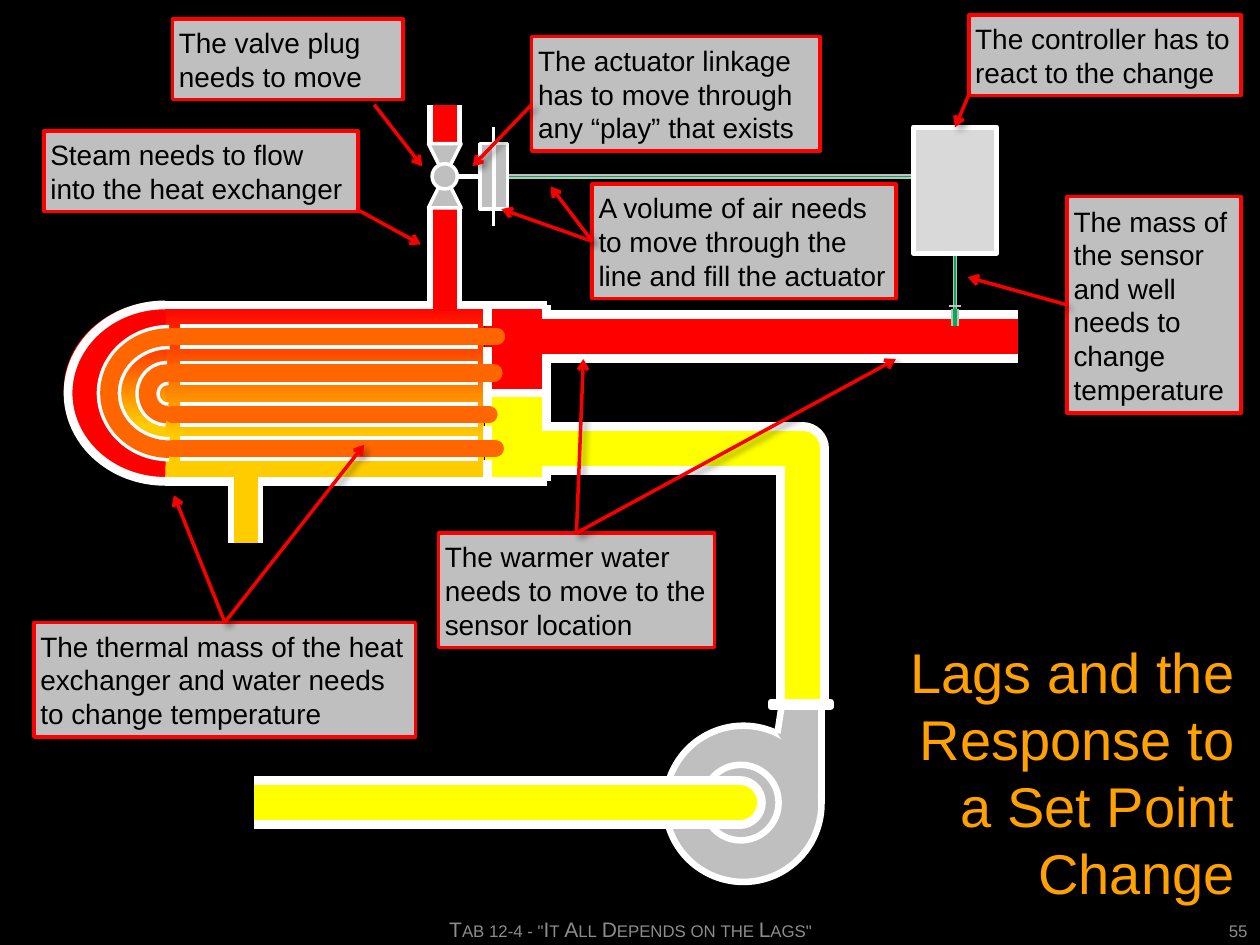
from dataclasses import dataclass

from lxml import etree
from pptx import Presentation
from pptx.dml.color import RGBColor
from pptx.enum.shapes import MSO_CONNECTOR, MSO_SHAPE
from pptx.enum.text import MSO_ANCHOR, PP_ALIGN
from pptx.oxml.ns import qn
from pptx.util import Inches, Pt

STRAIGHT = MSO_CONNECTOR.STRAIGHT
RECT, OVAL, ARC = MSO_SHAPE.RECTANGLE, MSO_SHAPE.OVAL, MSO_SHAPE.ARC
TRIANGLE = MSO_SHAPE.ISOSCELES_TRIANGLE
MIDDLE, CENTER, RIGHT, LEFT = MSO_ANCHOR.MIDDLE, PP_ALIGN.CENTER, PP_ALIGN.RIGHT, PP_ALIGN.LEFT
TOP_SIDE, LEFT_SIDE = 0, 1
HALF_UP, HALF_RIGHT = (108, 0), (162, 54.43)


@dataclass(frozen=True)
class Theme:
    """Colours, font and type sizes of the slide."""
    font: str = "Arial"
    title_size: int = 32
    note_size: int = 16
    footer_size: int = 12
    black: str = "000000"
    white: str = "FFFFFF"
    title: str = "FFA100"
    footer: str = "8C8C8C"
    metal: str = "BFBFBF"
    panel: str = "D9D9D9"
    signal: str = "00B050"
    hot: str = "FF0000"
    arrow: str = "F90000"
    tube: str = "FF6600"
    condensate: str = "FFCC00"
    cold: str = "FFFF00"


THEME = Theme()


def rgb(code):
    """Turn a hex code into a colour."""
    return RGBColor.from_string(code)


def add_shadow(effects):
    """Add a soft drop shadow to an effect list."""
    shadow = etree.SubElement(effects, qn("a:outerShdw"), blurRad=str(Pt(4)),
                              dist=str(Pt(3)), dir="2700000", algn="tl", rotWithShape="0")
    color = etree.SubElement(shadow, qn("a:srgbClr"), val=THEME.black)
    etree.SubElement(color, qn("a:alpha"), val="40000")


class Region:
    """Draws parts at offsets in inches from the corner of a region."""

    def __init__(self, page, left, top):
        self.shapes, self.left, self.top = page.shapes, left, top

    def point(self, x, y):
        """Convert an offset into a slide position."""
        return Inches(self.left + x), Inches(self.top + y)

    def line(self, start, end, color, width, cap="flat"):
        """Draw a straight line."""
        link = self.shapes.add_connector(STRAIGHT, *self.point(*start), *self.point(*end))
        link.line.color.rgb, link.line.width = rgb(color), Pt(width)
        properties = link._element.spPr
        properties.find(qn("a:ln")).set("cap", cap)
        etree.SubElement(properties, qn("a:effectLst"))
        return link

    def pipe(self, start, end, layers, cap="flat"):
        """Draw one line over another, as a wall and its content."""
        for color, width in layers:
            self.line(start, end, color, width, cap)

    def paint(self, shape, fill, line, width):
        """Set the fill and outline, either of which may be None."""
        shape.shadow.inherit = False
        if fill:
            shape.fill.solid()
            shape.fill.fore_color.rgb = rgb(fill)
        else:
            shape.fill.background()
        if line:
            shape.line.color.rgb, shape.line.width = rgb(line), Pt(width)
        else:
            shape.line.fill.background()
        return shape

    def shape(self, kind, x, y, w, h, fill=None, line=None, width=2, turn=0):
        """Draw a preset shape."""
        shape = self.shapes.add_shape(kind, *self.point(x, y), Inches(w), Inches(h))
        shape.rotation = turn
        return self.paint(shape, fill, line, width)

    def arc(self, frame, sweep, turn, color, width):
        """Draw half an ellipse as a thick line."""
        arc = self.shape(ARC, *frame, None, color, width, turn)
        arc.adjustments[0], arc.adjustments[1] = sweep
        return arc

    def outline(self, points, fill=None, line=None, width=1, close=True):
        """Draw a freeform through the points."""
        start, *rest = [self.point(*point) for point in points]
        builder = self.shapes.build_freeform(*start)
        builder.add_line_segments(rest, close=close)
        shape = self.paint(builder.convert_to_shape(), fill, line, width)
        if line:
            etree.SubElement(shape._element.spPr.find(qn("a:ln")), qn("a:round"))
        return shape


def heat_gradient(shape, angle):
    """Fade a shape from steam to condensate."""
    shape.fill.gradient()
    shape.fill.gradient_angle = angle
    first, last = shape.fill.gradient_stops
    first.color.rgb, first.position = rgb(THEME.hot), 0
    last.color.rgb, last.position = rgb(THEME.condensate), 0.75


def draw_exchanger(page, left, top):
    """Draw the shell, the water header, the tubes and the steam piping."""
    region, white, tube = Region(page, left, top), THEME.white, THEME.tube
    w, h, sheet = 3.03, 1.4, 2.56
    steam, drain = ((2.22, 0.05), (2.22, -0.76)), ((0.64, 1.34), (0.64, 1.89))
    outer_bend = ((-0.41, 0.22, 0.89, 0.96), HALF_UP, 270)
    inner_bend = ((-0.14, 0.54, 0.31, 0.33), HALF_RIGHT, 180)
    region.line(*steam, white, 20)
    region.line((0.64, 1.44), drain[1], white, 20)
    heat_gradient(region.shape(RECT, 0, 0, 2.53, h), 270)
    heat_gradient(region.arc((-0.56, 0, 1.13, 1.34), HALF_UP, 270, THEME.hot, 20), 180)
    for bend in (inner_bend, outer_bend):
        region.arc(*bend, white, 14)
    for y, color in ((0, THEME.hot), (h / 2, THEME.cold)):
        region.shape(RECT, 2.54, y, 0.49, h / 2, color)
    for y in (0, h):
        region.line((0, y), (w, y), white, 5)
    for start, end in ((0, 0.17), (0.33, 0.53), (0.59, 0.8), (0.96, 1.11), (1.23, h)):
        region.line((sheet, start), (sheet, end), white, 5)
    region.line((sheet, h / 2), (w, h / 2), white, 5)
    region.arc((-0.7, -0.07, h, 1.54), HALF_UP, 270, white, 5)
    region.line((w, 0), (w, h), white, 5)
    for y, end in ((0.25, 2.63), (0.54, 2.61), (0.87, 2.57), (1.14, 2.62)):
        region.line((2.48, y), (0.12, y), white, 14)
        region.line((end, y), (0.06, y), tube, 10, "rnd")
    for bend in (outer_bend, inner_bend):
        region.arc(*bend, tube, 10)
    region.line(*drain, THEME.condensate, 13.5)
    region.line(*steam, THEME.hot, 13.5)


def draw_water_pipes(page, left, top):
    """Draw the hot outlet and the cold riser of the header."""
    region = Region(page, left, top)
    for color, width, start in ((THEME.white, 30, 0.1), (THEME.hot, 20, 0)):
        region.line((start, 0), (3.81, 0), color, width)
    for color, width, start in ((THEME.white, 30, 0.1), (THEME.cold, 20, 0)):
        region.outline([(start, 0.89), (2.1, 0.89), (2.1, 2.89)], None, color, width, False)


def draw_valve(page, left, top):
    """Draw the steam valve with its linkage and actuator."""
    region, metal, white = Region(page, left, top), THEME.metal, THEME.white
    region.pipe((0.13, 0.32), (0.13, 0), ((white, 20), (THEME.hot, 13.5)))
    region.line((0.16, 0.57), (0.54, 0.57), white, 2.75)
    for x in (0.41, 0.52):
        region.shape(RECT, x, 0.31, 0.11, 0.52, metal, white)
    region.line((0.52, 0.18), (0.52, 0.96), white, 1.75)
    for y, turn in ((0.31, 180), (0.56, 0)):
        region.shape(TRIANGLE, 0, y, 0.26, 0.26, metal, white, turn=turn)
    region.shape(OVAL, 0.03, 0.47, 0.2, 0.2, metal, white)


def draw_pump(page, left, top):
    """Draw the pump with its flange and inlet pipe."""
    region, metal, white = Region(page, left, top), THEME.metal, THEME.white
    region.shape(OVAL, 3.26, 0.2, 1.24, 1.24, metal, white, 3.75)
    region.outline([(4.19, 0.04), (4.5, 0.04), (4.5, 0.8), (4.15, 0.26)], metal)
    region.line((4.19, 0), (4.15, 0.26), white, 3.75)
    region.line((4.5, 0.82), (4.5, 0.04), white, 3.75)
    region.shape(RECT, 4.1, 0.01, 0.47, 0.04, metal, white, 3.75)
    region.shape(OVAL, 3.56, 0.51, 0.6, 0.6, metal, white, 3.75)
    for start, cap in ((1.85, "rnd"), (0, "flat")):
        region.pipe((start, 0.81), (start + 2, 0.81), ((white, 30), (THEME.cold, 20)), cap)


def draw_controller(page, left, top):
    """Draw the temperature sensor and the controller, and return the latter."""
    region, metal, signal = Region(page, left, top), THEME.metal, THEME.signal
    region.pipe((0.33, 1.45), (0.33, 0.93), ((metal, 2.5), (signal, 0.75)))
    region.line((0.38, 1.42), (0.28, 1.42), metal, 1.25)
    region.pipe((0.33, 1.44), (0.33, 1.58), ((metal, 5), (signal, 2.25)))
    return region.shape(RECT, 0, 0, 0.66, 1, THEME.panel, THEME.white, 3)


def style_text(frame, text, size, color, align):
    """Set the text of a frame and format its run."""
    frame.text, frame.word_wrap = text, True
    para = frame.paragraphs[0]
    para.alignment = align
    span = para.runs[0]
    span.font.name, span.font.size = THEME.font, Pt(size)
    span.font.color.rgb = rgb(color)
    return span


def draw_callout(page, box, text, arrows, side=None, target=None):
    """Draw a note with arrows, joined to a side of the note or to a target."""
    region = Region(page, box[0], box[1])
    note = region.shape(RECT, 0, 0, *box[2:], THEME.white, THEME.hot)
    fill = note._element.spPr.find(qn("a:solidFill"))
    etree.SubElement(fill[0], qn("a:alpha"), val="75000")
    add_shadow(note._element.spPr.find(qn("a:effectLst")))
    frame = note.text_frame
    frame.margin_left = frame.margin_right = Inches(0.05)
    frame.margin_top = frame.margin_bottom = Inches(0.05)
    frame.vertical_anchor = MIDDLE
    style_text(frame, text, THEME.note_size, THEME.black, LEFT)
    for start, end in arrows:
        arrow = region.line(start, end, THEME.arrow, 2)
        if side is not None:
            arrow.begin_connect(note, side)
        if target is not None:
            arrow.end_connect(target, TOP_SIDE)
        properties = arrow._element.spPr
        etree.SubElement(properties.find(qn("a:ln")), qn("a:tailEnd"), type="arrow")
        add_shadow(properties.find(qn("a:effectLst")))


def draw_footer(page, box, text, align):
    """Write a small-caps footer text."""
    frame = page.shapes.add_textbox(*map(Inches, box)).text_frame
    frame.vertical_anchor = MIDDLE
    span = style_text(frame, text, THEME.footer_size, THEME.footer, align)
    span.font._element.set("cap", "small")


def draw_title(title, box, text):
    """Place and format the title placeholder."""
    title.left, title.top, title.width, title.height = map(Inches, box)
    title.text_frame.vertical_anchor = MIDDLE
    style_text(title.text_frame, text, THEME.title_size, THEME.title, RIGHT)


def main():
    """Build the slide and save it."""
    deck = Presentation()
    deck.slide_width, deck.slide_height = Inches(10), Inches(7.5)
    page = deck.slides.add_slide(deck.slide_layouts[5])
    page.background.fill.solid()
    page.background.fill.fore_color.rgb = rgb(THEME.black)
    Region(page, 4.03, 1.4).pipe((0, 0), (3.5, 0), ((THEME.metal, 2.5), (THEME.signal, 0.75)))
    draw_exchanger(page, 1.31, 2.42)
    draw_water_pipes(page, 4.27, 2.67)
    draw_valve(page, 3.4, 0.83)
    draw_pump(page, 2.02, 5.56)
    controller = draw_controller(page, 7.25, 1.01)
    draw_title(page.shapes.title, (7.02, 5, 2.88, 2.25), "Lags and the Response to a Set Point Change")
    callouts = [
        ((7.69, 0.12, 2.16, 0.64), "The controller has to react to the change",
         [((0, 0.63), (-0.11, 0.89))], None, controller),
        ((4.7, 1.46, 2.41, 0.91), "A volume of air needs to move through the line and fill the actuator",
         [((0, 0.46), (-0.72, 0.2)), ((0, 0.46), (-0.33, 0.02))], LEFT_SIDE),
        ((4.22, 0.29, 2.29, 0.91), "The actuator linkage has to move through any “play” that exists",
         [((0, 0.54), (-0.47, 1.03))]),
        ((1.37, 0.15, 1.83, 0.64), "The valve plug needs to move", [((1.6, 0.68), (1.98, 1.17))]),
        ((0.35, 1.04, 2.49, 0.64), "Steam needs to flow into the heat exchanger",
         [((2.48, 0.62), (2.99, 0.9))]),
        ((0.27, 4.94, 3.03, 0.91), "The thermal mass of the heat exchanger and water needs to change temperature",
         [((1.52, 0), (1.11, -1.01)), ((1.52, 0), (2.62, -1.41))], TOP_SIDE),
        ((3.48, 4.23, 2.19, 0.91), "The warmer water needs to move to the sensor location",
         [((1.09, 0), (1.15, -1.38)), ((1.09, 0), (3.63, -1.38))], TOP_SIDE),
        ((8.47, 1.56, 1.38, 1.72), "The mass of the sensor and well needs to change temperature",
         [((0, 0.86), (-0.79, 0.64))], LEFT_SIDE),
    ]
    for callout in callouts:
        draw_callout(page, *callout)
    draw_footer(page, (8.33, 7.25, 1.67, 0.25), "55", RIGHT)
    draw_footer(page, (1.67, 7.25, 6.67, 0.25), 'Tab 12-4 - "It All Depends on the Lags"', CENTER)
    deck.save("out.pptx")


if __name__ == "__main__":
    main()
